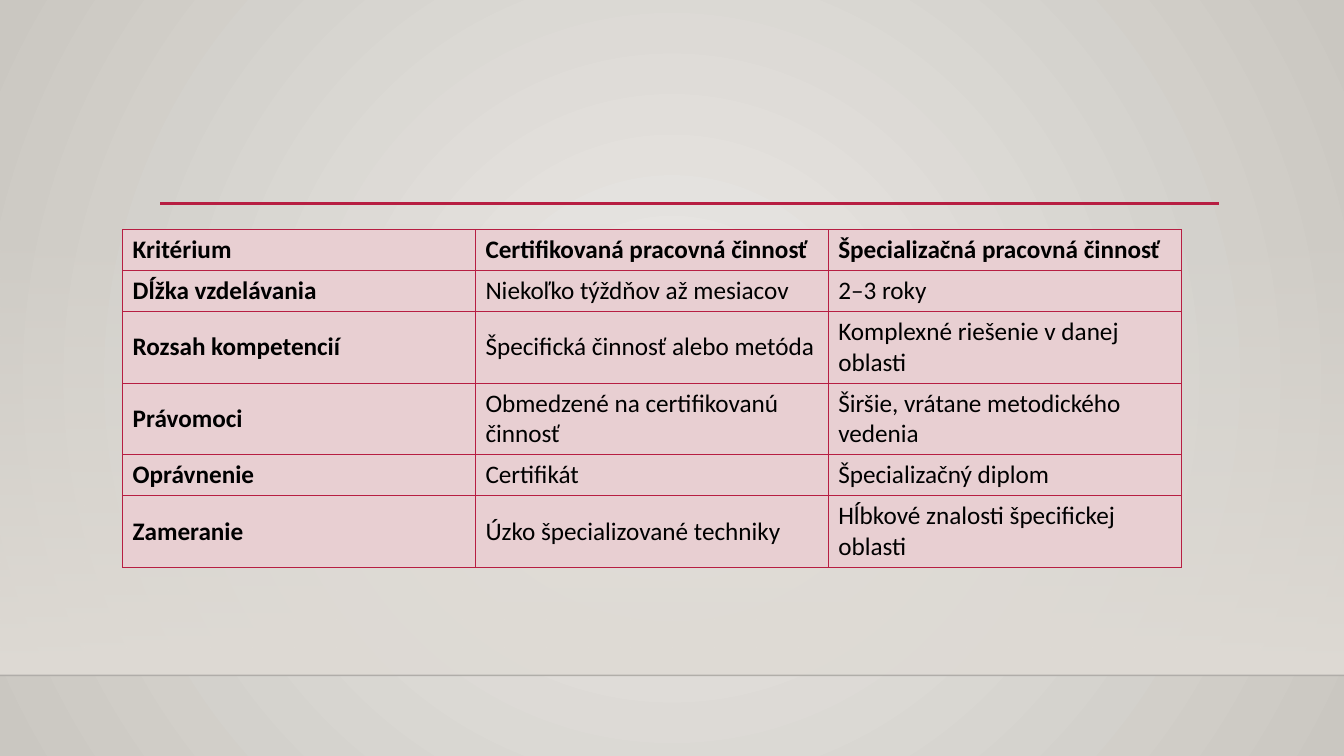
from lxml import etree
from pptx import Presentation
from pptx import util as u
from pptx.dml.color import RGBColor
from pptx.enum import shapes, text
from pptx.oxml.ns import qn

ROWS = [
    ("Kritérium", "Certifikovaná pracovná činnosť", "Špecializačná pracovná činnosť"),
    ("Dĺžka vzdelávania", "Niekoľko týždňov až mesiacov", "2–3 roky"),
    ("Rozsah kompetencií", "Špecifická činnosť alebo metóda", "Komplexné riešenie v danej oblasti"),
    ("Právomoci", "Obmedzené na certifikovanú činnosť", "Širšie, vrátane metodického vedenia"),
    ("Oprávnenie", "Certifikát", "Špecializačný diplom"),
    ("Zameranie", "Úzko špecializované techniky", "Hĺbkové znalosti špecifickej oblasti"),
]
TALL = {2, 3, 5}  # rows whose text takes two lines

THEME = dict(font="Calibri", size=18, ink="000000", red="B71E42", cell="E8CFD2",
             glow="ECEAE7", edge="CAC7C1", wall="DFDBD5", floor="000001")
WIDE, HIGH = 960, 540
WALL_TOP, FLOOR = 159, 482.4
LEFT, TOP, COL = 87.6, 164, 252
LINE, PAD = 22, 7.2


def color(name):
    return RGBColor.from_string(THEME[name])


def add(parent, tag, **attrs):
    return etree.SubElement(parent, qn(tag), attrs)


def blend(fill, first, last):
    fill.gradient()
    for stop, name in zip(fill.gradient_stops, (first, last)):
        stop.color.rgb = color(name)


def fade(node, share):
    """Set the opacity of the first colour under node, in percent."""
    add(next(node.iter(qn("a:srgbClr"))), "a:alpha", val=str(share * 1000))


def rule(slide, left, right, y, name, width):
    line = slide.shapes.add_connector(
        shapes.MSO_CONNECTOR.STRAIGHT, u.Pt(left), u.Pt(y), u.Pt(right), u.Pt(y))
    line.line.color.rgb = color(name)
    line.line.width = u.Pt(width)
    add(line.element.spPr, "a:effectLst")
    return line


def backdrop(slide):
    blend(slide.background.fill, "glow", "edge")
    lin = next(slide.element.iter(qn("a:lin")))
    ring = etree.Element(qn("a:path"), path="circle")
    add(ring, "a:fillToRect", l="50000", t="50000", r="50000", b="50000")
    lin.getparent().replace(lin, ring)

    wall = slide.shapes.add_shape(shapes.MSO_SHAPE.RECTANGLE, 0, u.Pt(WALL_TOP),
                                  u.Pt(WIDE), u.Pt(FLOOR - WALL_TOP))
    wall.shadow.inherit = False
    wall.line.fill.background()
    blend(wall.fill, "wall", "wall")
    wall.fill.gradient_angle = 270
    fade(wall.element.spPr, 0)
    fade(rule(slide, 0, WIDE, FLOOR, "floor", 1).element.spPr, 20)


def border(cell):
    props = cell._tc.get_or_add_tcPr()
    for spot, side in enumerate(("a:lnL", "a:lnR", "a:lnT", "a:lnB")):
        edge = etree.Element(qn(side), w=str(u.Pt(0.75)))
        add(add(edge, "a:solidFill"), "a:srgbClr", val=THEME["red"])
        props.insert(spot, edge)


def write(cell, words, bold):
    cell.fill.solid()
    cell.fill.fore_color.rgb = color("cell")
    cell.vertical_anchor = text.MSO_ANCHOR.MIDDLE
    border(cell)
    run = cell.text_frame.paragraphs[0].add_run()
    run.text = words
    font = run.font
    font.name, font.size, font.bold = THEME["font"], u.Pt(THEME["size"]), bold
    font.color.rgb = color("ink")


def grid(slide):
    highs = [LINE * (2 if i in TALL else 1) + PAD for i in range(len(ROWS))]
    cols = len(ROWS[0])
    table = slide.shapes.add_table(len(ROWS), cols, u.Pt(LEFT), u.Pt(TOP),
                                   u.Pt(COL * cols), u.Pt(sum(highs))).table
    table.first_row = table.horz_banding = False
    for i, row in enumerate(ROWS):
        table.rows[i].height = u.Pt(highs[i])
        for j, words in enumerate(row):
            write(table.cell(i, j), words, i == 0 or j == 0)


def main():
    deck = Presentation()
    deck.slide_width, deck.slide_height = u.Pt(WIDE), u.Pt(HIGH)
    slide = deck.slides.add_slide(deck.slide_layouts[6])
    backdrop(slide)
    rule(slide, 114.4, 871, 145.2, "red", 2.5)
    grid(slide)
    deck.save("out.pptx")


if __name__ == "__main__":
    main()
